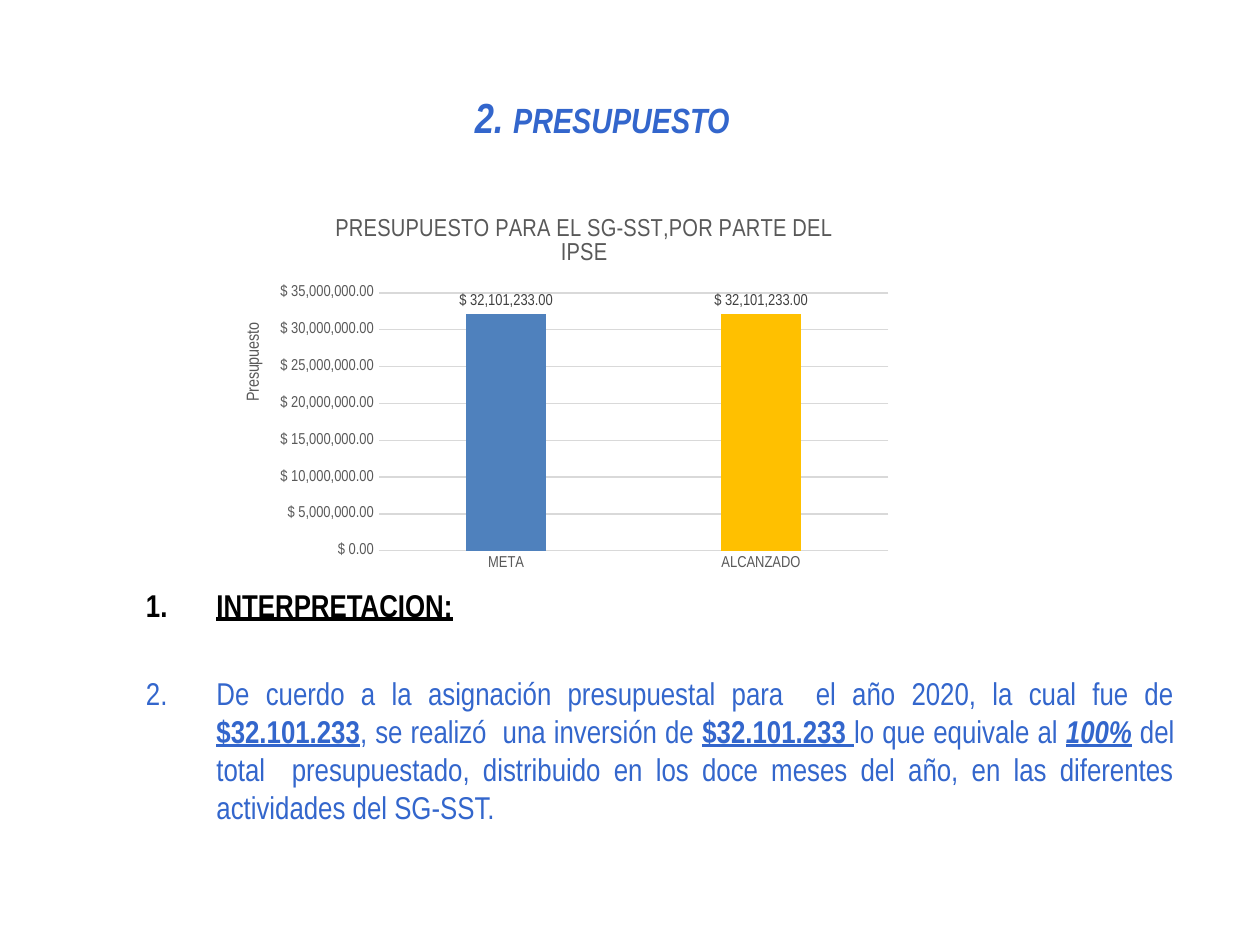
from pptx import Presentation
from pptx.chart.data import CategoryChartData
from pptx.dml.color import RGBColor
from pptx.enum.chart import XL_CHART_TYPE as ChartType, XL_LABEL_POSITION as LabelPosition
from pptx.enum.chart import XL_TICK_MARK as TickMark
from pptx.enum.text import PP_ALIGN as Align
from pptx.oxml import parse_xml
from pptx.oxml.ns import nsdecls, qn
from pptx.util import Inches, Pt
from lxml import etree

FONT = "Arial Narrow"
BLUE = RGBColor(0x33, 0x66, 0xCC)
BLACK = RGBColor(0, 0, 0)
GRAY = RGBColor(0x59, 0x59, 0x59)
LABEL_GRAY = RGBColor(0x40, 0x40, 0x40)
GRID_GRAY = RGBColor(0xD9, 0xD9, 0xD9)
BAR_BLUE = RGBColor(0x4F, 0x81, 0xBD)
BAR_YELLOW = RGBColor(0xFF, 0xC0, 0x00)
MONEY_FORMAT = '"$"\\ #,##0.00'


def style_font(font, size, color, bold=False, italic=False, underline=False):
    font.name = FONT
    font.size = Pt(size)
    font.color.rgb = color
    font.bold, font.italic, font.underline = bold, italic, underline


def place(element, index, target="", **fractions):
    """Give a chart part a manual layout in fractions of the chart."""
    for old in element.findall(qn("c:layout")):
        element.remove(old)
    inner = f'<c:layoutTarget val="{target}"/>' if target else ""
    inner += "".join(f'<c:{key}Mode val="edge"/>' for key in "xy")
    inner += "".join(f'<c:{key} val="{value}"/>' for key, value in fractions.items())
    element.insert(index, parse_xml(
        f'<c:layout {nsdecls("c")}><c:manualLayout>{inner}</c:manualLayout></c:layout>'))


presentation = Presentation()
presentation.slide_width, presentation.slide_height = Inches(10), Inches(7.5)
slide = presentation.slides.add_slide(presentation.slide_layouts[6])

# Heading
heading = slide.shapes.add_textbox(Inches(2.42), Inches(0.68), Inches(4.72), Inches(0.7))
heading.text_frame.word_wrap = True
paragraph = heading.text_frame.paragraphs[0]
paragraph.alignment = Align.CENTER
for text, size in (("2. ", 24), ("PRESUPUESTO", 20)):
    run = paragraph.add_run()
    run.text = text
    style_font(run.font, size, BLUE, bold=True, italic=True)

# Numbered interpretation: text, bold, italic (bold runs are underlined)
items = [
    (BLACK, [("INTERPRETACION:", True, False)]),
    (BLUE, [
        ("De cuerdo a la asignación presupuestal para  el año 2020, la cual fue de ", False, False),
        ("$32.101.233", True, False),
        (", se realizó  una inversión de ", False, False),
        ("$32.101.233 ", True, False),
        ("lo que equivale al ", False, False),
        ("100%", True, True),
        (" del total  presupuestado, distribuido en los doce meses del año, en las "
         "diferentes actividades del SG-SST.", False, False),
    ]),
]
body = slide.shapes.add_textbox(Inches(1.06), Inches(4.6), Inches(8.36), Inches(1.89))
frame = body.text_frame
frame.word_wrap = True
for index, (color, runs) in enumerate(items):
    paragraph = frame.add_paragraph() if index else frame.paragraphs[0]
    paragraph.alignment = Align.JUSTIFY
    if index:
        paragraph.space_before = Pt(29)
    properties = paragraph._p.get_or_add_pPr()
    properties.set("marL", str(Inches(0.56)))
    properties.set("indent", str(-Inches(0.56)))
    etree.SubElement(properties, qn("a:buFont"), typeface="+mj-lt")
    etree.SubElement(properties, qn("a:buAutoNum"), type="arabicPeriod")
    for text, bold, italic in runs:
        run = paragraph.add_run()
        run.text = text
        style_font(run.font, 18, color, bold, italic, underline=bold)

# Budget chart
data = CategoryChartData(number_format=MONEY_FORMAT)
data.categories = ["META", "ALCANZADO"]
data.add_series("Series 1", [32101233, 32101233])
chart = slide.shapes.add_chart(
    ChartType.COLUMN_CLUSTERED, Inches(1.73), Inches(1.6), Inches(5.43), Inches(3), data).chart
style_font(chart.font, 10, BLACK)
chart.has_legend = False
place(chart._chartSpace.chart.plotArea, 0, "inner", x=0.235, y=0.242, w=0.745, h=0.682)

# Columns and their labels
plot = chart.plots[0]
plot.gap_width, plot.overlap = 219, -27
plot.vary_by_categories = False
series = plot.series[0]
for index, color in enumerate((BAR_BLUE, BAR_YELLOW)):
    fill = series.points[index].format.fill if index else series.format.fill
    fill.solid()
    fill.fore_color.rgb = color
labels = series.data_labels
labels.show_value = True
labels.position = LabelPosition.OUTSIDE_END
labels.number_format, labels.number_format_is_linked = MONEY_FORMAT, False
style_font(labels.font, 9, LABEL_GRAY)

# Axes
value_axis, category_axis = chart.value_axis, chart.category_axis
for axis in (value_axis, category_axis):
    axis.major_tick_mark = axis.minor_tick_mark = TickMark.NONE
    style_font(axis.tick_labels.font, 9, GRAY)
value_axis.minimum_scale, value_axis.maximum_scale = 0, 35000000
value_axis.major_unit = 5000000
value_axis.tick_labels.number_format = MONEY_FORMAT
value_axis.tick_labels.number_format_is_linked = False
value_axis.format.line.fill.background()
for line in (value_axis.major_gridlines.format.line, category_axis.format.line):
    line.color.rgb = GRID_GRAY
    line.width = Pt(0.75)

# Chart title and axis title
titles = (
    (chart.chart_title, "PRESUPUESTO PARA EL SG-SST,POR PARTE DEL IPSE", 14, 0.165, 0.025),
    (value_axis.axis_title, "Presupuesto", 10, 0.035, 0.313),
)
for title, text, size, left, top in titles:
    title.text_frame.text = text
    paragraph = title.text_frame.paragraphs[0]
    paragraph.alignment = Align.CENTER
    style_font(paragraph.runs[0].font, size, GRAY)
    place(title._element, 1, x=left, y=top)

presentation.save("out.pptx")
